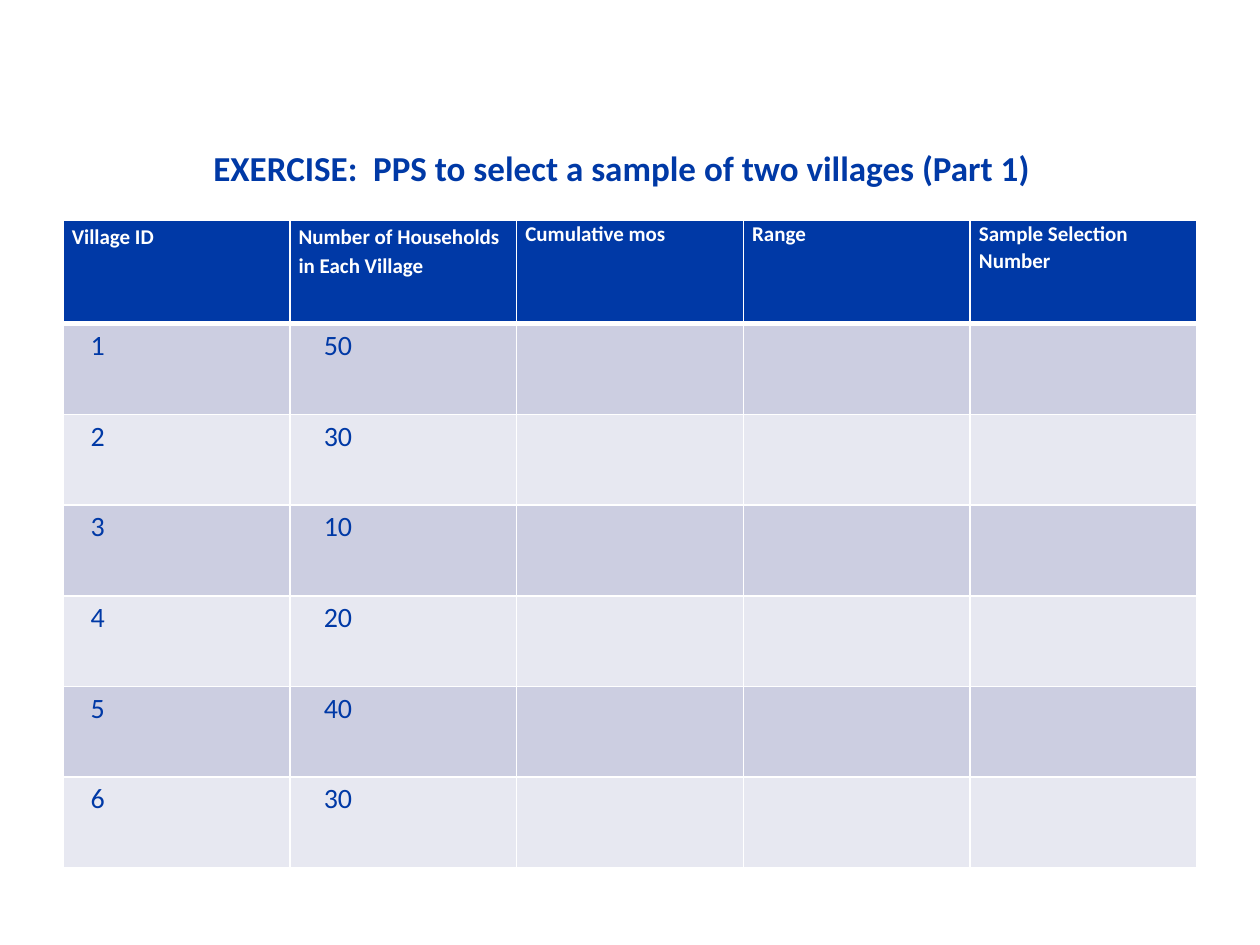
from lxml import etree
from pptx import Presentation
from pptx import util as u
from pptx.dml.color import RGBColor
from pptx.enum import text
from pptx.oxml import ns

BLUE = RGBColor(0x00, 0x39, 0xA6)
WHITE = RGBColor(0xFF, 0xFF, 0xFF)
BANDS = (RGBColor(0xCC, 0xCE, 0xE1), RGBColor(0xE7, 0xE8, 0xF1))
FONT = "Calibri"

HEADINGS = ["Village ID", "Number of Households\nin Each Village",
            "Cumulative mos", "Range", "Sample Selection Number"]
HOUSEHOLDS = [50, 30, 10, 20, 40, 30]
HEADING_SPACING = [1.15, 1.15, 1.05, 1.05, 1.05]
PADDING = u.Inches(0.07)
INDENTS = (u.Inches(0.15), u.Inches(0.2))


def style_paragraph(paragraph, size, color, bold, spacing):
    paragraph.line_spacing = spacing
    for run in paragraph.runs:
        run.font.name = FONT
        run.font.size = u.Pt(size)
        run.font.bold = bold
        run.font.color.rgb = color


def set_borders(cell, widths):
    """Draw white borders; widths are points in the order left, right, top, bottom."""
    properties = cell._tc.get_or_add_tcPr()
    for position, (side, width) in enumerate(zip("LRTB", widths)):
        line = etree.Element(ns.qn(f"a:ln{side}"), w=str(u.Pt(width)))
        fill = etree.SubElement(line, ns.qn("a:solidFill"))
        etree.SubElement(fill, ns.qn("a:srgbClr"), val=str(WHITE))
        properties.insert(position, line)


def fill_cell(cell, words, fill, indent=0):
    cell.text_frame.text = words
    cell.fill.solid()
    cell.fill.fore_color.rgb = fill
    cell.margin_left = PADDING + indent
    cell.margin_right = PADDING
    cell.margin_top = cell.margin_bottom = 0


def place_title(slide, left, top, width, height):
    title = slide.shapes.title
    title.left, title.top, title.width, title.height = left, top, width, height
    frame = title.text_frame
    frame.text = "EXERCISE:  PPS to select a sample of two villages (Part 1)"
    frame.vertical_anchor = text.MSO_ANCHOR.BOTTOM
    frame.margin_right = u.Inches(0.23)
    heading = frame.paragraphs[0]
    heading.alignment = text.PP_ALIGN.CENTER
    style_paragraph(heading, 20, BLUE, True, u.Pt(30))


def place_village_table(slide, left, top, width, header_height, row_height):
    row_count = len(HOUSEHOLDS) + 1
    height = header_height + row_height * len(HOUSEHOLDS)
    villages = slide.shapes.add_table(
        row_count, len(HEADINGS), left, top, width, height).table
    for row in villages.rows:
        row.height = row_height
    villages.rows[0].height = header_height

    for column, (heading, spacing) in enumerate(zip(HEADINGS, HEADING_SPACING)):
        cell = villages.cell(0, column)
        fill_cell(cell, heading, BLUE)
        set_borders(cell, (1, 1, 1, 3))
        for paragraph in cell.text_frame.paragraphs:
            style_paragraph(paragraph, 12, WHITE, True, spacing)

    for village, households in enumerate(HOUSEHOLDS, start=1):
        band = BANDS[(village - 1) % 2]
        values = [str(village), str(households), "", "", ""]
        for column, value in enumerate(values):
            cell = villages.cell(village, column)
            indent = INDENTS[column] if value else 0
            fill_cell(cell, value, band, indent)
            set_borders(cell, (1, 1, 3 if village == 1 else 1, 1))
            style_paragraph(cell.text_frame.paragraphs[0], 16, BLUE, False, 1.15)


def main():
    deck = Presentation()
    deck.slide_width, deck.slide_height = u.Inches(10), u.Inches(7.5)
    slide = deck.slides.add_slide(deck.slide_layouts[5])
    left, width = u.Inches(0.5), u.Inches(9)
    place_title(slide, left, u.Inches(0.3), width, u.Inches(1.25))
    place_village_table(slide, left, u.Inches(1.75), width,
                        u.Inches(0.82), u.Inches(0.72))
    deck.save("out.pptx")


if __name__ == "__main__":
    main()
